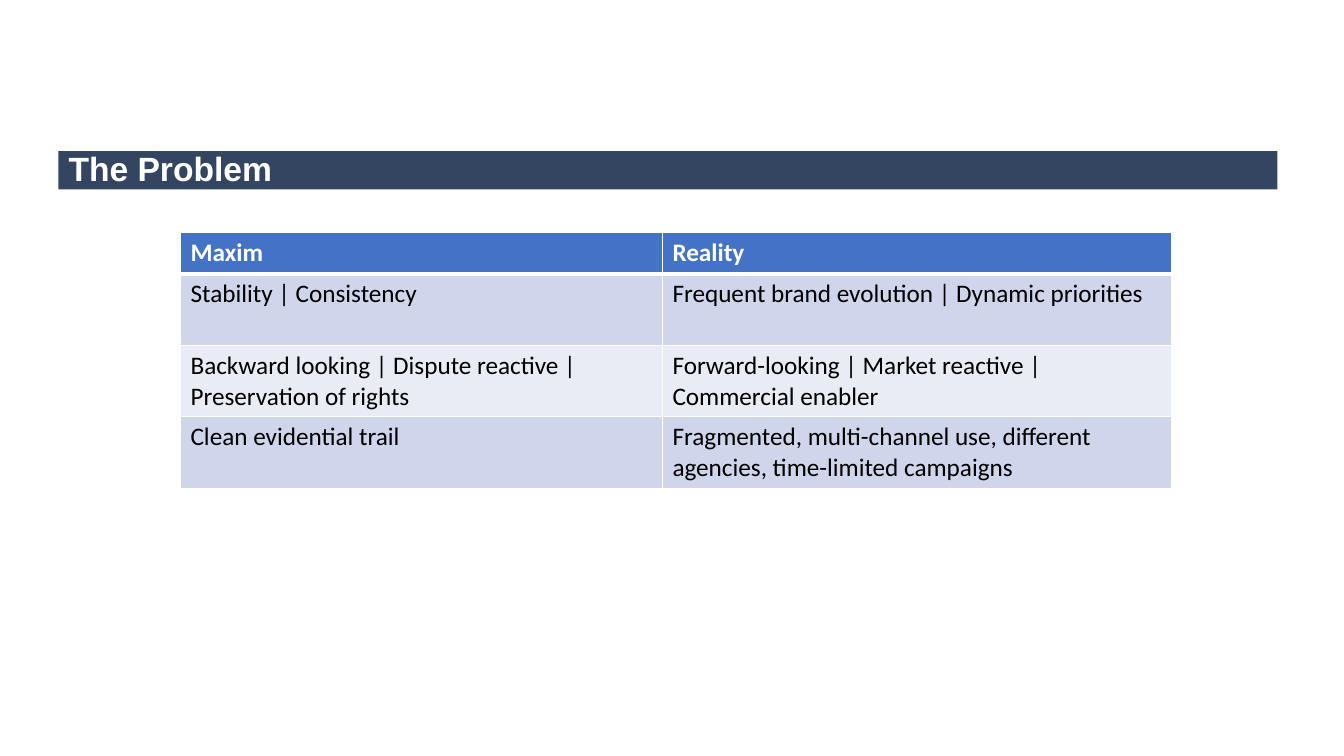
from lxml import etree
from pptx import Presentation
from pptx.dml.color import RGBColor
from pptx.enum.text import MSO_ANCHOR, MSO_AUTO_SIZE, PP_ALIGN
from pptx.oxml.ns import qn
from pptx.util import Inches, Pt

MIDDLE = MSO_ANCHOR.MIDDLE
NO_FIT = MSO_AUTO_SIZE.NONE
LEFT = PP_ALIGN.LEFT
TITLE_ONLY = 5

COLORS = {
    "bar": "344561",
    "header": "4472C4",
    "odd": "CFD5EA",
    "even": "E9EBF5",
    "white": "FFFFFF",
    "black": "000000",
}
ROWS = [
    ("Maxim", "Reality"),
    ("Stability | Consistency", "Frequent brand evolution | Dynamic priorities"),
    ("Backward looking | Dispute reactive | Preservation of rights",
     "Forward-looking | Market reactive | Commercial enabler"),
    ("Clean evidential trail",
     "Fragmented, multi-channel use, different agencies, time-limited campaigns"),
]
COLUMN_WIDTHS = [4.78, 5.05]
HEADER_HEIGHT, BODY_HEIGHT = 0.4, 0.71


def style_text(span, font_name, size, color, bold):
    span.font.name = font_name
    span.font.size = Pt(size)
    span.font.bold = bold
    span.font.color.rgb = RGBColor.from_string(COLORS[color])


def set_borders(cell, bottom_width):
    properties = cell._tc.get_or_add_tcPr()
    widths = {"a:lnL": 1, "a:lnR": 1, "a:lnT": 1, "a:lnB": bottom_width}
    for tag, width in widths.items():
        line = etree.SubElement(properties, qn(tag), w=str(Pt(width)))
        fill = etree.SubElement(line, qn("a:solidFill"))
        etree.SubElement(fill, qn("a:srgbClr"), val=COLORS["white"])


deck = Presentation()
deck.slide_width, deck.slide_height = Inches(13.33), Inches(7.5)
page = deck.slides.add_slide(deck.slide_layouts[TITLE_ONLY])

# Title bar
title = page.shapes.title
title.left, title.top = Inches(0.58), Inches(1.5)
title.width, title.height = Inches(12.09), Inches(0.38)
title.fill.solid()
title.fill.fore_color.rgb = RGBColor.from_string(COLORS["bar"])
title.text_frame.text = "The Problem"
title.text_frame.auto_size = NO_FIT
title.text_frame.vertical_anchor = MIDDLE
para = title.text_frame.paragraphs[0]
para.alignment = LEFT
para.line_spacing = 0.9
style_text(para.runs[0], "Arial", 24, "white", True)

# Comparison table
table = page.shapes.add_table(
    len(ROWS), len(COLUMN_WIDTHS), Inches(1.79), Inches(2.31),
    Inches(sum(COLUMN_WIDTHS)),
    Inches(HEADER_HEIGHT + BODY_HEIGHT * (len(ROWS) - 1))).table
for column, width in zip(table.columns, COLUMN_WIDTHS):
    column.width = Inches(width)

for row_index, texts in enumerate(ROWS):
    is_header = row_index == 0
    table.rows[row_index].height = Inches(HEADER_HEIGHT if is_header else BODY_HEIGHT)
    band = "header" if is_header else "odd" if row_index % 2 else "even"
    for column_index, text in enumerate(texts):
        cell = table.cell(row_index, column_index)
        set_borders(cell, 3 if is_header else 1)
        cell.fill.solid()
        cell.fill.fore_color.rgb = RGBColor.from_string(COLORS[band])
        cell.text_frame.text = text
        style_text(cell.text_frame.paragraphs[0].runs[0], "Calibri", 18,
                   "white" if is_header else "black", is_header)

deck.save("out.pptx")
